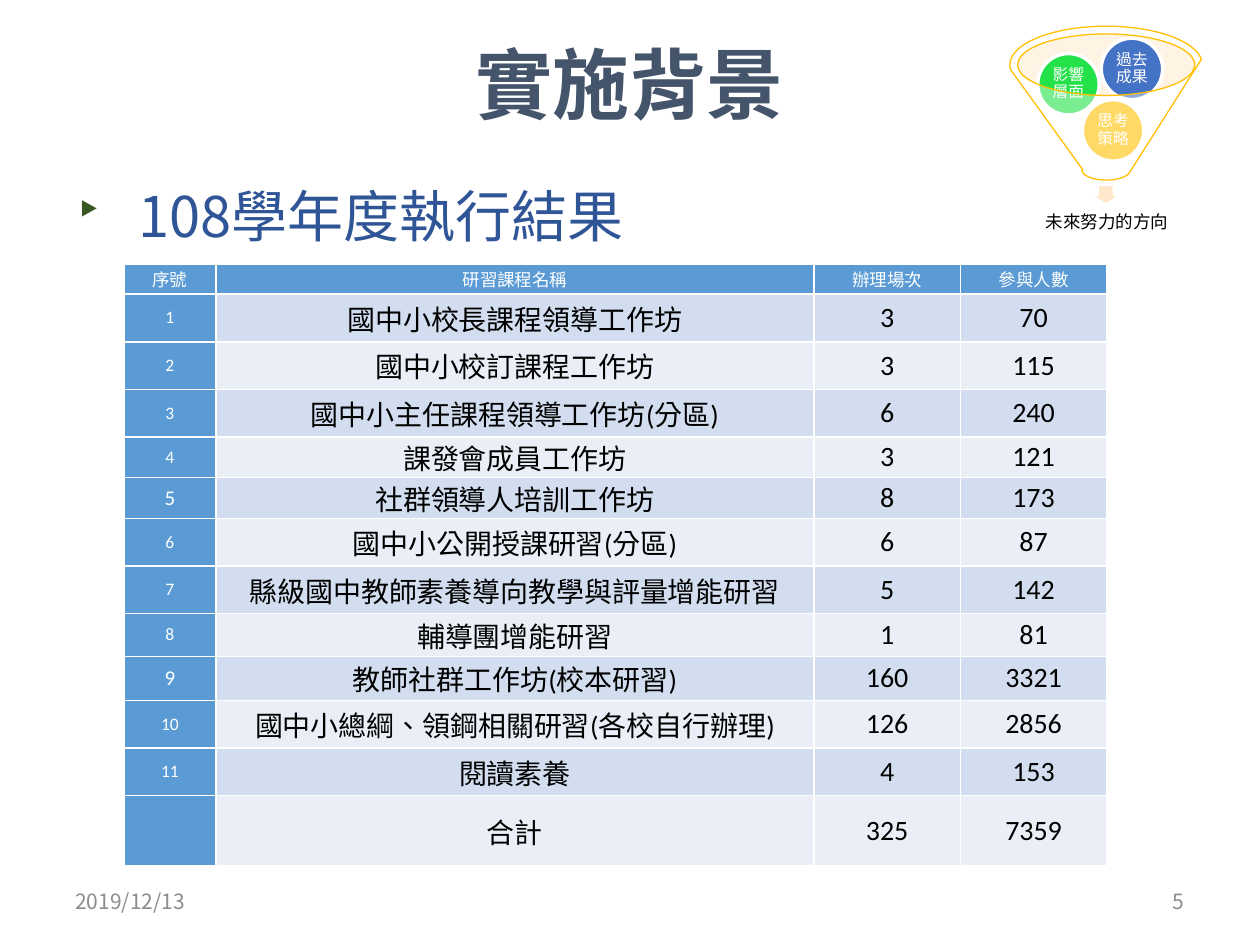
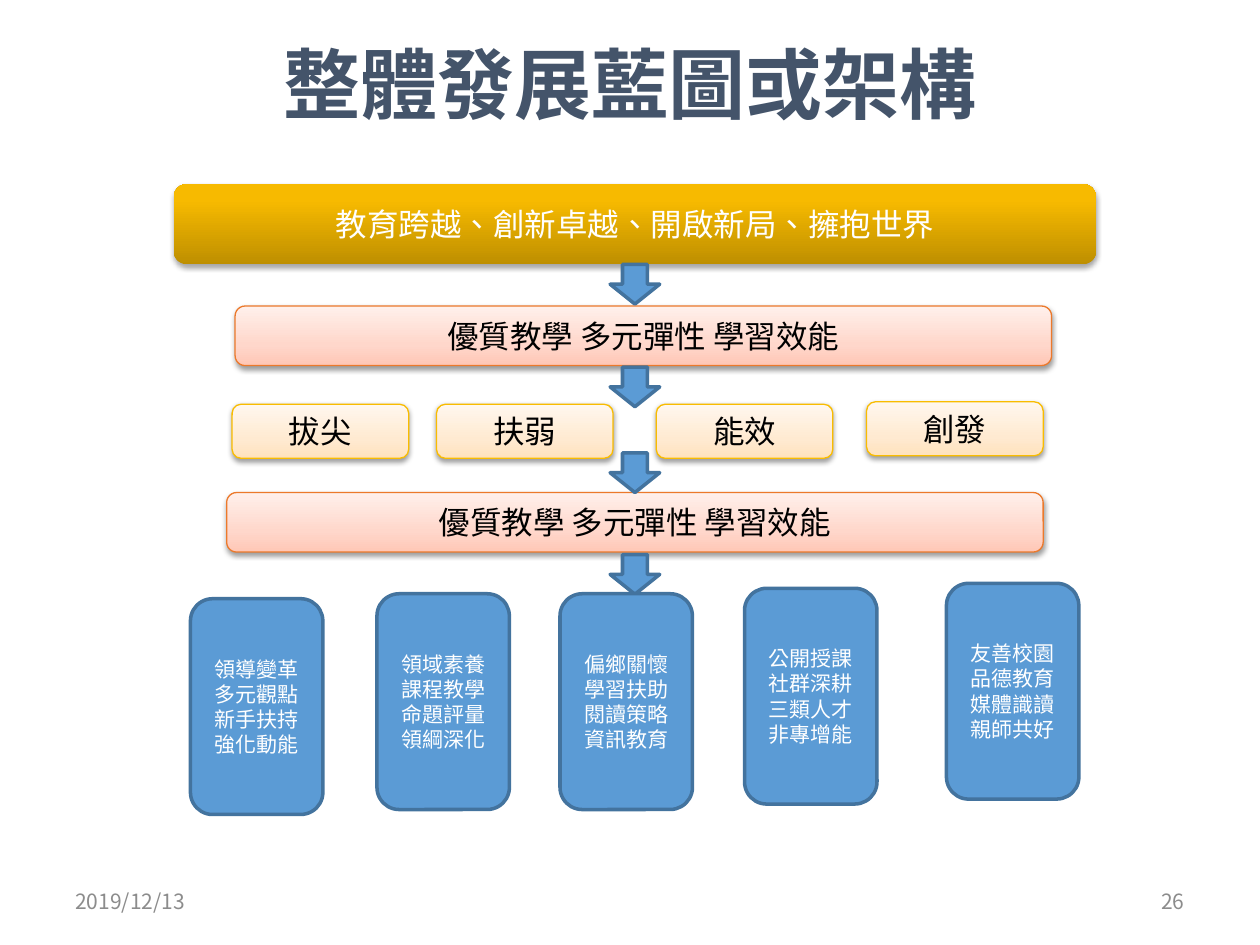
from lxml import etree
from pptx import Presentation
from pptx import util as u
from pptx.dml.color import RGBColor
from pptx.enum import shapes, text
from pptx.oxml import parse_xml
from pptx.oxml.ns import qn

COLORS = {
    "white": "FFFFFF", "black": "000000", "title": "44546A", "heading": "2F5597",
    "bullet": "385723", "footer": "8C8C8C", "blue": "5B9BD5", "blue_line": "43739E",
    "band_odd": "D2DEEF", "band_even": "EAEFF7", "cream": "FFE2BD", "peach": "FFE8CC",
    "gold": "FFC000", "green": "23E148", "royal": "4472C4",
    "pink_line": "EC792B", "yellow_line": "F9BC00",
}
# Gradient stops run from the bottom of a shape to its top
GRADIENTS = {
    "gold_bar": [(0, "BE8F00"), (80, "F7BA00"), (100, "F8BB00")],
    "pink_bar": [(0, "FFC7B6"), (35, "FFD7CB"), (100, "FFF0EB")],
    "yellow_bar": [(0, "FFE2BD"), (35, "FFEAD1"), (100, "FFF7EE")],
}
SANS = {"latin": "Noto Sans CJK SC", "ea": "Noto Sans CJK SC"}
BODY = {"latin": "Calibri", "ea": "Noto Sans CJK TC"}
NS = 'xmlns:a="http://schemas.openxmlformats.org/drawingml/2006/main"'
SHAPE = shapes.MSO_SHAPE
ALIGN = text.PP_ALIGN
MIDDLE = text.MSO_ANCHOR.MIDDLE


def rgb(name):
    return RGBColor.from_string(COLORS[name])


def cm(*values):
    return [u.Cm(v) for v in values]


# --- Text ---
def write(tf, lines, size, color, fonts=BODY, align=ALIGN.CENTER, bold=False,
          spacing=None, inset=None, anchor=MIDDLE):
    frame = {"word_wrap": True, "vertical_anchor": anchor}
    if inset is not None:
        for side in ("left", "right", "top", "bottom"):
            frame["margin_" + side] = u.Cm(inset)
    for key, value in frame.items():
        setattr(tf, key, value)
    for i, line in enumerate(lines.split("\n")):
        p = tf.add_paragraph() if i else tf.paragraphs[0]
        p.alignment, p.line_spacing = align, spacing
        r = p.add_run()
        r.text = line
        for key, value in {"size": u.Pt(size), "bold": bold, "name": fonts["latin"]}.items():
            setattr(r.font, key, value)
        r.font.color.rgb = rgb(color)
        rpr = r._r.get_or_add_rPr()
        rpr.set("lang", "zh-TW")
        rpr.find(qn("a:latin")).addnext(
            parse_xml(f'<a:ea {NS} typeface="{fonts["ea"]}"/>'))


def add_text(s, box, lines, size, color, **fmt):
    sp = s.shapes.add_textbox(*cm(*box))
    write(sp.text_frame, lines, size, color, **fmt)
    return sp


# --- Shapes ---
def fill_gradient(sp, stops):
    gs = "".join(f'<a:gs pos="{pos * 1000}"><a:srgbClr val="{c}"/></a:gs>' for pos, c in stops)
    sp._element.spPr.find(qn("a:prstGeom")).addnext(parse_xml(
        f'<a:gradFill {NS} rotWithShape="1"><a:gsLst>{gs}</a:gsLst>'
        '<a:lin ang="16200000" scaled="0"/></a:gradFill>'))


def add_shadow(sp, opacity, distance):
    sp._element.spPr.find(qn("a:effectLst")).append(parse_xml(
        f'<a:outerShdw {NS} blurRad="{u.Pt(3.1)}" dist="{u.Pt(distance)}" dir="5400000" '
        f'rotWithShape="0"><a:srgbClr val="{COLORS["black"]}">'
        f'<a:alpha val="{opacity * 1000}"/></a:srgbClr></a:outerShdw>'))


def add_shape(s, kind, box, fill, line=None, width=2, alpha=None):
    sp = s.shapes.add_shape(kind, *cm(*box))
    sp.shadow.inherit = False
    if fill in GRADIENTS:
        fill_gradient(sp, GRADIENTS[fill])
    else:
        sp.fill.solid()
        sp.fill.fore_color.rgb = rgb(fill)
    if alpha:
        clr = sp._element.spPr.find(qn("a:solidFill"))[0]
        etree.SubElement(clr, qn("a:alpha")).set("val", str(alpha * 1000))
    if line:
        sp.line.color.rgb = rgb(line)
        sp.line.width = u.Pt(width)
    else:
        sp.line.fill.background()
    return sp


def add_bar(s, box, label, fill, line=None, color="black", shadow=(38, 1.6)):
    sp = add_shape(s, SHAPE.ROUNDED_RECTANGLE, box, fill, line, 0.75)
    add_shadow(sp, *shadow)
    write(sp.text_frame, label, 18, color)


# --- Shared slide frame ---
def add_slide(prs, title, number):
    s = prs.slides.add_slide(prs.slide_layouts[6])
    for left, label, align in ((1.27, "2019/12/13", ALIGN.LEFT), (18.2, number, ALIGN.RIGHT)):
        add_text(s, (left, 17.66, 5.93, 1.01), label, 12, "footer", fonts=SANS, align=align)
    add_text(s, (1.27, 0.08, 22.86, 3.18), title, 44, "title", fonts=SANS, bold=True)
    return s


def add_heading(s, label):
    sp = add_text(s, (1.27, 3.53, 22.86, 13.49), label, 32, "heading", fonts=SANS,
                  align=ALIGN.LEFT, anchor=text.MSO_ANCHOR.TOP)
    ppr = sp.text_frame.paragraphs[0]._p.get_or_add_pPr()
    ppr.set("marL", str(u.Cm(1.27)))
    ppr.set("indent", str(u.Cm(-1.27)))
    clr = etree.SubElement(ppr, qn("a:buClr"))
    etree.SubElement(clr, qn("a:srgbClr")).set("val", COLORS["bullet"])
    etree.SubElement(ppr, qn("a:buSzPct")).set("val", "80000")
    etree.SubElement(ppr, qn("a:buChar")).set("char", "‣")


# --- Course table ---
COURSES = [
    ("序號", "研習課程名稱", "辦理場次", "參與人數"),
    ("1", "國中小校長課程領導工作坊", "3", "70"),
    ("2", "國中小校訂課程工作坊", "3", "115"),
    ("3", "國中小主任課程領導工作坊(分區)", "6", "240"),
    ("4", "課發會成員工作坊", "3", "121"),
    ("5", "社群領導人培訓工作坊", "8", "173"),
    ("6", "國中小公開授課研習(分區)", "6", "87"),
    ("7", "縣級國中教師素養導向教學與評量增能研習", "5", "142"),
    ("8", "輔導團增能研習", "1", "81"),
    ("9", "教師社群工作坊(校本研習)", "160", "3321"),
    ("10", "國中小總綱、領鋼相關研習(各校自行辦理)", "126", "2856"),
    ("11", "閱讀素養", "4", "153"),
    ("", "合計", "325", "7359"),
]
COLUMN_WIDTHS = [1.85, 12.06, 2.95, 2.95]
ROW_HEIGHTS = [0.6, 0.96, 0.96, 0.96, 0.82, 0.82, 0.96, 0.96, 0.86, 0.89, 0.96, 0.96, 1.42]


def style_cell(cell, fill):
    tcpr = cell._tc.get_or_add_tcPr()
    for side in "LRTB":
        tcpr.append(parse_xml(
            f'<a:ln{side} {NS} w="{u.Pt(1)}"><a:solidFill>'
            f'<a:srgbClr val="{COLORS["white"]}"/></a:solidFill></a:ln{side}>'))
    cell.fill.solid()
    cell.fill.fore_color.rgb = rgb(fill)
    margins = {"margin_left": 0.05, "margin_right": 0.05, "margin_top": 0, "margin_bottom": 0}
    for key, value in margins.items():
        setattr(cell, key, u.Cm(value))
    cell.vertical_anchor = MIDDLE


def add_course_table(s):
    box = (2.5, 5.33, sum(COLUMN_WIDTHS), sum(ROW_HEIGHTS))
    table = s.shapes.add_table(len(COURSES), len(COLUMN_WIDTHS), *cm(*box)).table
    for column, width in zip(table.columns, COLUMN_WIDTHS):
        column.width = u.Cm(width)
    for i, (row, height) in enumerate(zip(COURSES, ROW_HEIGHTS)):
        table.rows[i].height = u.Cm(height)
        for j, value in enumerate(row):
            cell = table.cell(i, j)
            heading = i == 0 or j == 0
            fill = "blue" if heading else "band_odd" if i % 2 else "band_even"
            style_cell(cell, fill)
            if value:
                size = (12 if value in ("5", "9") else 10) if heading else 16
                color = "white" if heading else "black"
                write(cell.text_frame, value, size, color, anchor=None)


# --- Funnel diagram ---
def add_funnel(s):
    add_shape(s, SHAPE.OVAL, (20.5, 0.69, 3.58, 1.24), "cream", alpha=40)
    add_shape(s, SHAPE.DOWN_ARROW, (21.95, 3.71, 0.69, 0.43), "peach", "white")
    add_text(s, (20.65, 4.07, 3.33, 0.84), "未來努力的方向", 10, "black",
             spacing=0.9, inset=0.2)
    for left, top, fill, label in ((21.82, 2.01, "gold", "思考策略"),
                                   (20.92, 1.08, "green", "影響層面"),
                                   (22.2, 0.77, "royal", "過去成果")):
        ball = add_shape(s, SHAPE.OVAL, (left, top, 1.24, 1.24), fill, "white")
        write(ball.text_frame, label, 9, "white", spacing=0.9, inset=0.03)
    add_shape(s, SHAPE.FUNNEL, (20.36, 0.53, 3.88, 3.1), "white", "gold", 0.75, alpha=40)


# --- Blueprint diagram ---
PILLARS = [
    (3.84, 12.07, "領導變革\n多元觀點\n新手扶持\n強化動能"),
    (7.6, 11.97, "領域素養\n課程教學\n命題評量\n領綱深化"),
    (11.29, 11.97, "偏鄉關懷\n學習扶助\n閱讀策略\n資訊教育"),
    (15.01, 11.86, "公開授課\n社群深耕\n三類人才\n非專增能"),
    (19.08, 11.76, "友善校園\n品德教育\n媒體識讀\n親師共好"),
]
GOALS = [(4.68, 8.15, "拔尖"), (8.8, 8.15, "扶弱"), (13.23, 8.15, "能效"), (17.47, 8.1, "創發")]


def add_blueprint(s):
    add_bar(s, (3.5, 3.71, 18.6, 1.62), "教育跨越、創新卓越、開啟新局、擁抱世界",
            "gold_bar", color="white", shadow=(35, 1.8))
    for left, top in ((4.74, 6.17), (4.57, 9.93)):
        add_bar(s, (left, top, 16.46, 1.2), "優質教學 多元彈性 學習效能", "pink_bar", "pink_line")
    for left, top, label in GOALS:
        add_bar(s, (left, top, 3.56, 1.09), label, "yellow_bar", "yellow_line")
    for top in (5.33, 7.4, 9.13, 11.18):
        add_shape(s, SHAPE.DOWN_ARROW, (12.3, top, 1, 0.8), "blue", "blue_line")
    for left, top, lines in PILLARS:
        sp = add_shape(s, SHAPE.ROUNDED_RECTANGLE, (left, top, 2.67, 4.35), "blue", "blue_line")
        write(sp.text_frame, lines, 12, "white")


def main():
    prs = Presentation()
    prs.slide_width, prs.slide_height = cm(25.4, 19.05)

    background = add_slide(prs, "實施背景", "5")
    add_heading(background, "108學年度執行結果")
    add_course_table(background)
    add_funnel(background)

    blueprint = add_slide(prs, "整體發展藍圖或架構", "26")
    add_blueprint(blueprint)

    prs.save("out.pptx")


if __name__ == "__main__":
    main()
